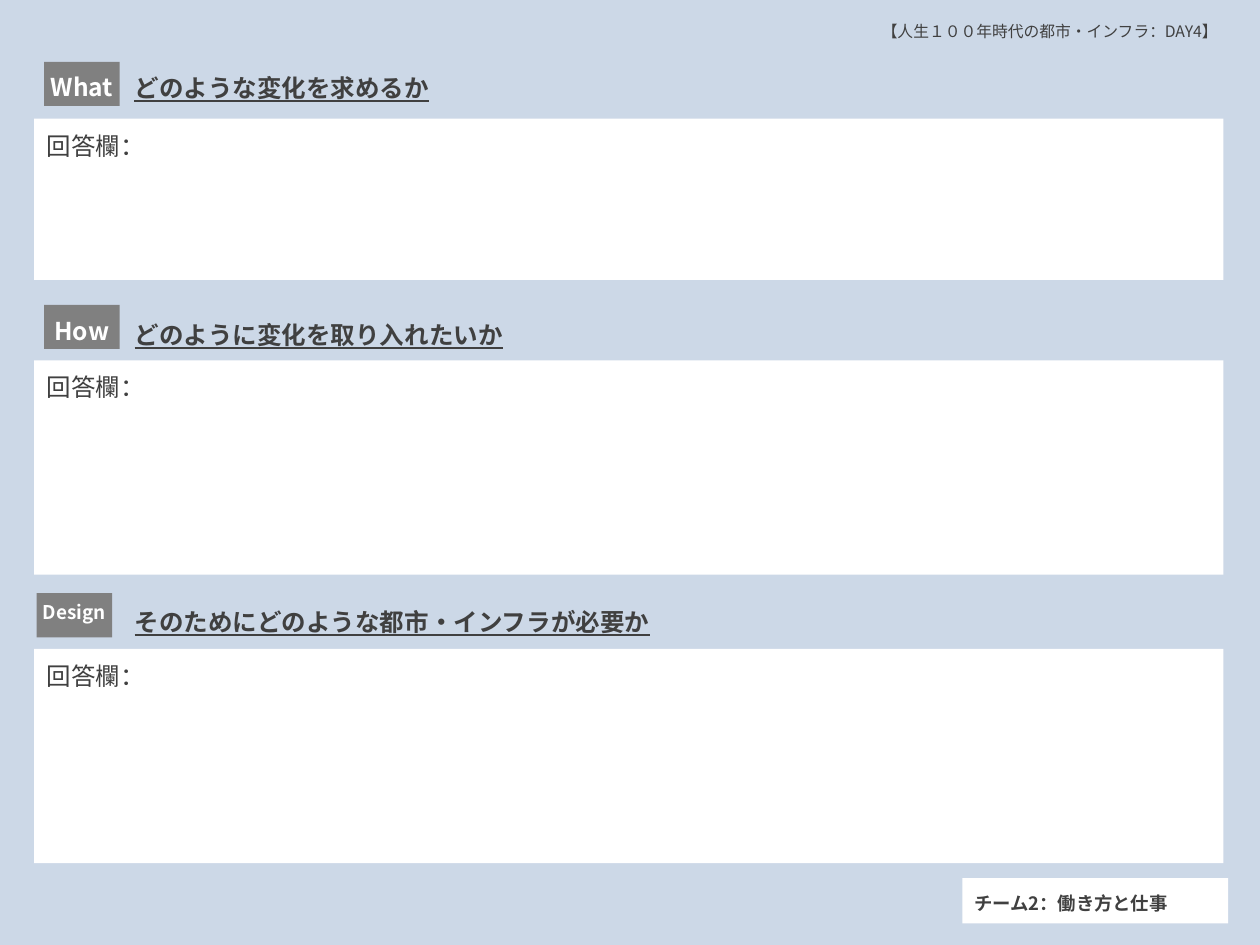
from dataclasses import dataclass

from lxml.etree import SubElement
from pptx import Presentation
from pptx.dml.color import RGBColor
from pptx.enum.shapes import MSO_SHAPE as Shape
from pptx.enum.text import MSO_ANCHOR as Anchor, PP_ALIGN as Align
from pptx.oxml.ns import qn
from pptx.util import Pt

FONT = "Noto Sans CJK JP"
INK, WHITE, GRAY, SKY = "404040", "FFFFFF", "808080", "CCD8E7"


@dataclass
class Box:
    left: float
    top: float
    width: float
    height: float

    def lengths(self) -> list:
        return [Pt(n) for n in (self.left, self.top, self.width, self.height)]


@dataclass
class Section:
    tag: str
    question: str
    tag_left: float
    tag_top: float
    question_top: float
    question_width: float
    answer_top: float
    answer_height: float
    tag_size: float = 14
    tag_spacing: float = 1.1


SECTIONS = [
    Section("What", "どのような変化を求めるか", 25.2, 35.3, 34.6, 403.2, 67.8, 92.2),
    Section("How", "どのように変化を取り入れたいか", 25.2, 174.2, 175.7, 603.4, 206, 122.4),
    Section("Design", "そのためにどのような都市・インフラが必要か", 20.9, 339, 339.8, 603.4,
            370.8, 122.4, tag_size=10.8, tag_spacing=1),
]


def color(value: str) -> RGBColor:
    return RGBColor.from_string(value)


def write(shape, text: str, *, size: float = 14, ink: str = INK, bold: bool = False,
          underline: bool = False, align=Align.LEFT, anchor=Anchor.TOP,
          spacing: float = 1.2) -> None:
    frame = shape.text_frame
    frame.word_wrap = True
    frame.vertical_anchor = anchor
    paragraph = frame.paragraphs[0]
    paragraph.alignment = align
    paragraph.line_spacing = spacing
    run = paragraph.add_run()
    run.text = text
    font = run.font
    font.name, font.size, font.bold, font.underline = FONT, Pt(size), bold, underline
    font.color.rgb = color(ink)
    SubElement(run._r.get_or_add_rPr(), qn("a:ea"), typeface=FONT)


def add_panel(shapes, box: Box, fill: str):
    panel = shapes.add_shape(Shape.RECTANGLE, *box.lengths())
    panel.shadow.inherit = False
    panel.fill.solid()
    panel.fill.fore_color.rgb = color(fill)
    panel.line.fill.background()
    return panel


def add_label(shapes, box: Box, text: str, **style) -> None:
    write(shapes.add_textbox(*box.lengths()), text, **style)


def add_section(shapes, section: Section) -> None:
    add_label(shapes, Box(69.8, section.question_top, section.question_width, 32.4),
              section.question, bold=True, underline=True)
    answer = add_panel(shapes, Box(19.5, section.answer_top, 679.6, section.answer_height), WHITE)
    write(answer, "回答欄：")
    badge = shapes.add_group_shape().shapes
    add_panel(badge, Box(section.tag_left, section.tag_top, 43.2, 25.2), GRAY)
    add_label(badge, Box(section.tag_left - 5.4, section.tag_top + 0.9, 54, 25.2), section.tag,
              size=section.tag_size, spacing=section.tag_spacing, ink=WHITE, bold=True,
              align=Align.CENTER)


def main() -> None:
    deck = Presentation()
    deck.slide_width, deck.slide_height = Pt(720), Pt(540)
    slide = deck.slides.add_slide(deck.slide_layouts[6])
    slide.background.fill.solid()
    slide.background.fill.fore_color.rgb = color(SKY)
    shapes = slide.shapes
    add_label(shapes, Box(496.8, 6.5, 223.2, 25.9),
              "【人生１００年時代の都市・インフラ：DAY4】", size=9)
    for section in SECTIONS:
        add_section(shapes, section)
    team = add_panel(shapes, Box(549.9, 501.8, 151.9, 25.9), WHITE)
    write(team, "チーム2：働き方と仕事", size=10.5, bold=True, anchor=Anchor.MIDDLE)
    deck.save("out.pptx")


if __name__ == "__main__":
    main()
